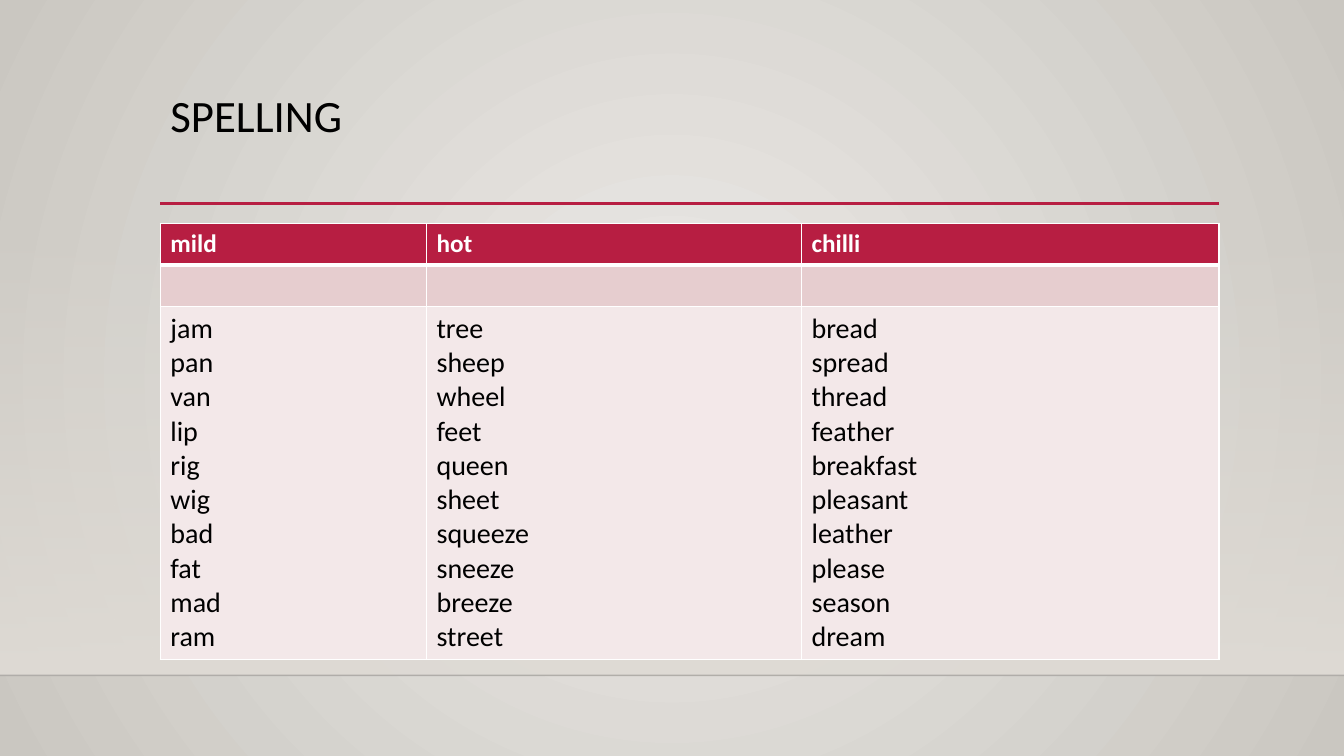
from dataclasses import dataclass

from lxml import etree
from pptx import Presentation
from pptx.dml.color import RGBColor
from pptx.enum.shapes import MSO_CONNECTOR, MSO_SHAPE
from pptx.enum.text import MSO_ANCHOR, PP_ALIGN
from pptx.oxml.ns import qn
from pptx.util import Inches, Pt

STRAIGHT = MSO_CONNECTOR.STRAIGHT
RECTANGLE = MSO_SHAPE.RECTANGLE
TOP = MSO_ANCHOR.TOP
LEFT = PP_ALIGN.LEFT
TITLE_ONLY = 5

SLIDE_W, SLIDE_H = 13.33, 7.5
MARGIN, CONTENT_W = 1.59, 10.5
TITLE_TOP, TITLE_H = 0.88, 1.15
RULE_Y, TABLE_TOP, WALL_TOP, FLOOR_Y = 2.02, 2.22, 2.21, 6.7
COLUMN_WIDTHS = (2.64, 3.72, 4.14)
ROW_HEIGHTS = (0.41, 0.41, 3.42)


@dataclass(frozen=True)
class Theme:
    font: str = "Calibri"
    text: str = "000000"
    accent: str = "B71E42"
    white: str = "FFFFFF"
    band_dark: str = "E6CDCF"
    band_light: str = "F3E8E9"
    glow: str = "ECEAE7"
    edge: str = "CAC7C1"
    wall: str = "DFDBD5"
    floor_line: str = "000001"
    title_size: int = 32
    header_size: int = 18
    word_size: int = 20


THEME = Theme()

WORDS_BY_LEVEL = {
    "mild": "jam pan van lip rig wig bad fat mad ram",
    "hot": "tree sheep wheel feet queen sheet squeeze sneeze breeze street",
    "chilli": "bread spread thread feather breakfast pleasant leather please season dream",
}


def set_alpha(color_element, percent):
    etree.SubElement(color_element, qn("a:alpha")).set("val", str(percent * 1000))


def set_gradient(fill, start, end):
    fill.gradient()
    for stop, position, color in zip(fill.gradient_stops, (0, 1), (start, end)):
        stop.position = position
        stop.color.rgb = RGBColor.from_string(color)


def paint_background(slide):
    """Radial glow that darkens from the middle of the slide to its edges."""
    set_gradient(slide.background.fill, THEME.glow, THEME.edge)
    linear = slide.element.find(".//" + qn("a:lin"))
    radial = etree.Element(qn("a:path"), path="circle")
    etree.SubElement(radial, qn("a:fillToRect"), dict.fromkeys("ltrb", "50000"))
    linear.getparent().replace(linear, radial)


def add_wall(slide):
    """Band above the floor line that fades in from top to bottom."""
    wall = slide.shapes.add_shape(RECTANGLE, 0, Inches(WALL_TOP), Inches(SLIDE_W),
                                  Inches(FLOOR_Y - WALL_TOP))
    wall.shadow.inherit = False
    wall.line.fill.background()
    set_gradient(wall.fill, THEME.wall, THEME.wall)
    wall.fill.gradient_angle = 270
    set_alpha(wall.element.spPr.find(".//" + qn("a:srgbClr")), 0)


def add_rule(slide, left, right, y, color, width, alpha=100):
    rule = slide.shapes.add_connector(STRAIGHT, Inches(left), Inches(y), Inches(right), Inches(y))
    rule.line.color.rgb = RGBColor.from_string(color)
    rule.line.width = Pt(width)
    properties = rule.element.spPr
    if alpha < 100:
        set_alpha(properties.find(".//" + qn("a:srgbClr")), alpha)
    etree.SubElement(properties, qn("a:effectLst"))


def format_text(frame, size, color, bold=False):
    for paragraph in frame.paragraphs:
        paragraph.alignment = LEFT
        font = paragraph.font
        for target in (font, *(run.font for run in paragraph.runs)):
            target.name = THEME.font
            target.size = Pt(size)
            target.bold = bold
            target.color.rgb = RGBColor.from_string(color)


def set_title(slide, text):
    title = slide.shapes.title
    title.left, title.top = Inches(MARGIN), Inches(TITLE_TOP)
    title.width, title.height = Inches(CONTENT_W), Inches(TITLE_H)
    frame = title.text_frame
    frame.text = text
    frame.vertical_anchor = TOP
    frame.paragraphs[0].line_spacing = 0.9
    format_text(frame, THEME.title_size, THEME.text)


def set_borders(cell, top, bottom):
    """White borders; top and bottom widths are in points."""
    properties = cell._tc.get_or_add_tcPr()
    widths = {"a:lnL": 1, "a:lnR": 1, "a:lnT": top, "a:lnB": bottom}
    for index, (tag, width) in enumerate(widths.items()):
        border = etree.Element(qn(tag), w=str(Pt(width)))
        solid = etree.SubElement(border, qn("a:solidFill"))
        etree.SubElement(solid, qn("a:srgbClr"), val=THEME.white)
        properties.insert(index, border)


def add_word_table(slide):
    rows = (
        (list(WORDS_BY_LEVEL), THEME.accent, THEME.header_size, THEME.white, True, (1, 3)),
        ([""] * len(WORDS_BY_LEVEL), THEME.band_dark, THEME.header_size, THEME.text, False, (3, 1)),
        (["\n".join(words.split()) for words in WORDS_BY_LEVEL.values()],
         THEME.band_light, THEME.word_size, THEME.text, False, (1, 1)),
    )
    table = slide.shapes.add_table(len(rows), len(COLUMN_WIDTHS), Inches(MARGIN),
                                   Inches(TABLE_TOP), Inches(CONTENT_W),
                                   Inches(sum(ROW_HEIGHTS))).table
    table.horz_banding = False
    for column, width in zip(table.columns, COLUMN_WIDTHS):
        column.width = Inches(width)
    for row, height, (texts, fill, size, color, bold, borders) in zip(
            table.rows, ROW_HEIGHTS, rows):
        row.height = Inches(height)
        for cell, text in zip(row.cells, texts):
            cell.text_frame.text = text
            format_text(cell.text_frame, size, color, bold)
            cell.fill.solid()
            cell.fill.fore_color.rgb = RGBColor.from_string(fill)
            set_borders(cell, *borders)


def main():
    deck = Presentation()
    deck.slide_width, deck.slide_height = Inches(SLIDE_W), Inches(SLIDE_H)
    slide = deck.slides.add_slide(deck.slide_layouts[TITLE_ONLY])
    paint_background(slide)
    add_wall(slide)
    add_rule(slide, 0, SLIDE_W, FLOOR_Y, THEME.floor_line, 1, alpha=20)
    add_rule(slide, MARGIN, MARGIN + CONTENT_W, RULE_Y, THEME.accent, 2.5)
    set_title(slide, "SPELLING")
    add_word_table(slide)
    deck.save("out.pptx")


if __name__ == "__main__":
    main()
